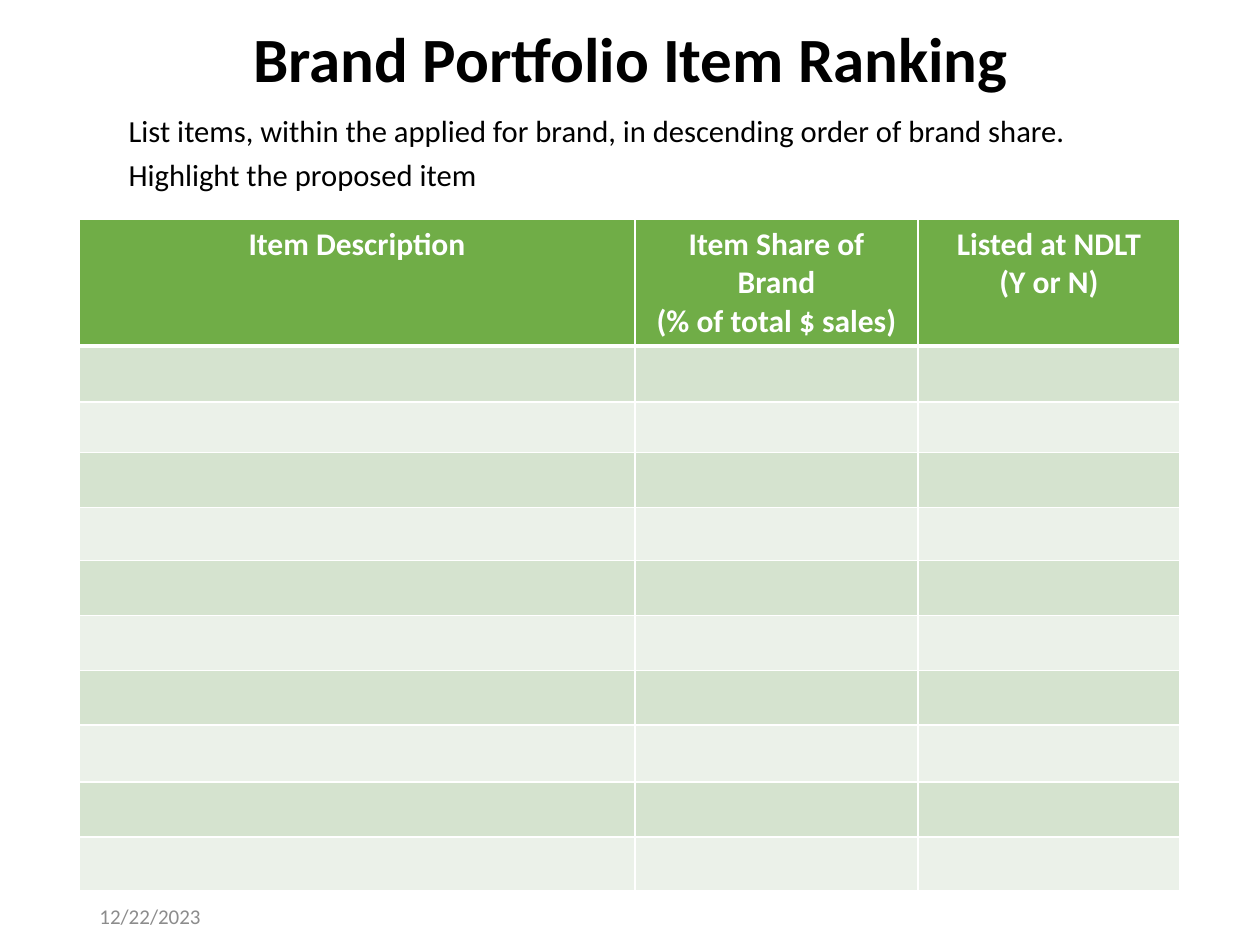
"""Build the brand portfolio item ranking slide."""
from dataclasses import dataclass

from lxml.etree import SubElement
from pptx import Presentation
from pptx.dml.color import RGBColor
from pptx.enum.text import MSO_ANCHOR, MSO_AUTO_SIZE, PP_ALIGN
from pptx.oxml.ns import qn
from pptx.util import Emu, Pt


@dataclass(frozen=True)
class Theme:
    font: str = "Calibri"
    black: str = "000000"
    white: str = "FFFFFF"
    gray: str = "8C8C8C"
    header: str = "70AD47"
    bands: tuple = ("D5E3CF", "EBF1E9")
    title_size: float = 36
    body_size: float = 17.5
    table_size: float = 18
    date_size: float = 12


THEME = Theme()
PX_PER_INCH = 126
COLUMN_WIDTHS = (556, 283, 262)
ROW_HEIGHTS = (127, 56, 50, 55, 53, 55, 55, 55, 57, 55, 54)
HEADERS = (
    ("Item Description",),
    ("Item Share of Brand", "(% of total $ sales)"),
    ("Listed at NDLT", "(Y or N)"),
)


def px(length):
    return Emu(round(length * 914400 / PX_PER_INCH))


def place(shape, left, top, width, height):
    shape.left, shape.top = px(left), px(top)
    shape.width, shape.height = px(width), px(height)


def write(frame, lines, size, color, bold=False, align=PP_ALIGN.LEFT,
          line_spacing=1.0, space_before=0):
    """Fill a text frame with one evenly formatted paragraph per line."""
    frame.text = "\n".join(lines)
    for paragraph in frame.paragraphs:
        paragraph.alignment = align
        paragraph.line_spacing = line_spacing
        paragraph.space_before = Pt(space_before)
        font = paragraph.font
        font.name, font.size, font.bold = THEME.font, Pt(size), bold
        font.color.rgb = RGBColor.from_string(color)


def remove_bullets(frame):
    for paragraph in frame.paragraphs:
        properties = paragraph._p.get_or_add_pPr()
        properties.set("marL", "0")
        properties.set("indent", "0")
        bullet = properties.makeelement(qn("a:buNone"))
        properties.insert_element_before(bullet, "a:tabLst", "a:defRPr", "a:extLst")


def add_title(slide):
    title = slide.shapes.title
    place(title, 64, 20, 1134, 84)
    frame = title.text_frame
    frame.auto_size = MSO_AUTO_SIZE.NONE
    frame.vertical_anchor = MSO_ANCHOR.MIDDLE
    write(frame, ["Brand Portfolio Item Ranking"], THEME.title_size, THEME.black,
          bold=True, align=PP_ALIGN.CENTER, line_spacing=0.9)


def add_instructions(slide):
    body = slide.placeholders[1]
    place(body, 116, 116, 1066, 84)
    frame = body.text_frame
    frame.auto_size = MSO_AUTO_SIZE.NONE
    frame.vertical_anchor = MSO_ANCHOR.TOP
    write(frame, [
        "List items, within the applied for brand, in descending order of brand share.",
        "Highlight the proposed item",
    ], THEME.body_size, THEME.black, line_spacing=0.7, space_before=10)
    remove_bullets(frame)


def set_borders(cell, bottom_width):
    """Draw white cell edges, with a chosen weight below."""
    properties = cell._tc.get_or_add_tcPr()
    edges = (("lnL", 1), ("lnR", 1), ("lnT", 1), ("lnB", bottom_width))
    for index, (edge, width) in enumerate(edges):
        line = properties.makeelement(qn(f"a:{edge}"), {"w": str(Pt(width))})
        fill = SubElement(line, qn("a:solidFill"))
        SubElement(fill, qn("a:srgbClr"), val=THEME.white)
        properties.insert(index, line)


def style_cell(cell, color, bottom_width=1):
    cell.fill.solid()
    cell.fill.fore_color.rgb = RGBColor.from_string(color)
    set_borders(cell, bottom_width)


def add_ranking_table(slide):
    table = slide.shapes.add_table(
        len(ROW_HEIGHTS), len(COLUMN_WIDTHS), px(79), px(219),
        px(sum(COLUMN_WIDTHS)), px(sum(ROW_HEIGHTS))).table
    for column, width in zip(table.columns, COLUMN_WIDTHS):
        column.width = px(width)
    for row, height in zip(table.rows, ROW_HEIGHTS):
        row.height = px(height)
    header, *items = table.rows
    for cell, lines in zip(header.cells, HEADERS):
        write(cell.text_frame, lines, THEME.table_size, THEME.white,
              bold=True, align=PP_ALIGN.CENTER)
        style_cell(cell, THEME.header, bottom_width=3)
    for index, row in enumerate(items):
        for cell in row.cells:
            style_cell(cell, THEME.bands[index % 2])


def add_date(slide):
    box = slide.shapes.add_textbox(px(87), px(907), px(284), px(19))
    frame = box.text_frame
    frame.word_wrap = True
    frame.vertical_anchor = MSO_ANCHOR.MIDDLE
    write(frame, ["12/22/2023"], THEME.date_size, THEME.gray)


def main():
    presentation = Presentation()
    presentation.slide_width, presentation.slide_height = px(1260), px(945)
    slide = presentation.slides.add_slide(presentation.slide_layouts[1])
    add_title(slide)
    add_instructions(slide)
    add_date(slide)
    add_ranking_table(slide)
    presentation.save("out.pptx")


if __name__ == "__main__":
    main()
